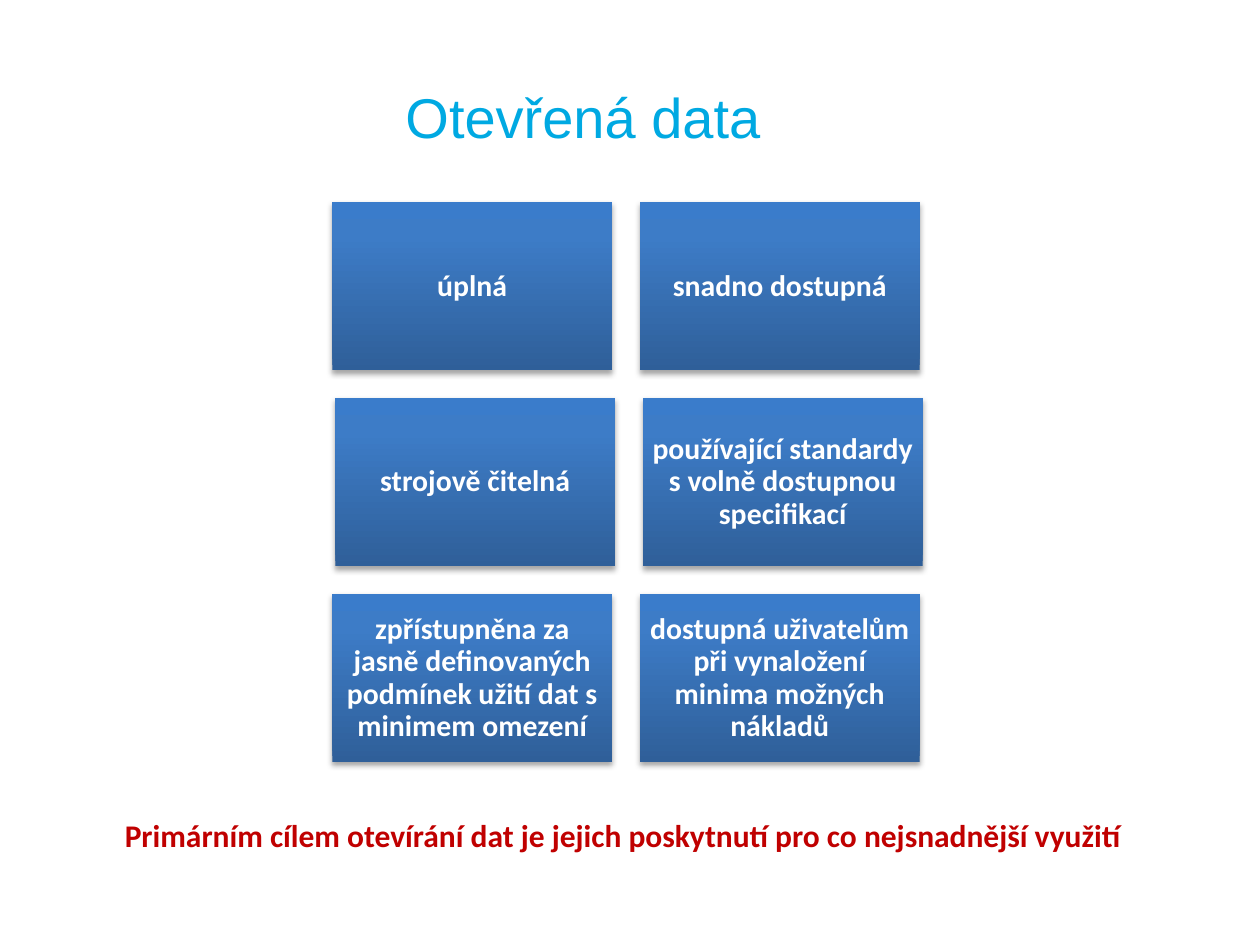
"""Build the slide on the properties of open data."""
import dataclasses

import lxml.etree
import pptx
import pptx.dml.color
import pptx.enum.shapes
import pptx.enum.text
import pptx.oxml
import pptx.oxml.ns
import pptx.shapes.autoshape
import pptx.slide
import pptx.util

Cm = pptx.util.Cm
ALIGN = pptx.enum.text.PP_ALIGN

COLORS = {
    "title": "00A9E2",
    "tile_text": "FFFFFF",
    "conclusion": "C00000",
    "tile_bottom": "2F5F99",
    "tile_middle": "3D7CC7",
    "tile_top": "3A7CCB",
    "shadow": "000000",
}
GRADIENT = ((0, "tile_bottom"), (80, "tile_middle"), (100, "tile_top"))
TILE_WIDTH, TILE_HEIGHT = 5.64, 3.39
COLUMN_STEP, ROW_STEP = 6.2, 3.95
GRID_TOP = 4.08
TILE_INSET = 0.18


@dataclasses.dataclass(frozen=True)
class TileRow:
    """A row of tiles with its left edge in centimetres."""

    left: float
    labels: tuple[str, ...]


ROWS = (
    TileRow(6.7, ("úplná", "snadno dostupná")),
    TileRow(6.76, ("strojově čitelná", "používající standardy s volně dostupnou specifikací")),
    TileRow(6.7, (
        "zpřístupněna za jasně definovaných podmínek užití dat s minimem omezení",
        "dostupná uživatelům při vynaložení minima možných nákladů",
    )),
)


def write_text(shape: pptx.shapes.autoshape.Shape, text: str, *, size: float, color: str,
               font: str = "Calibri", bold: bool = True, align: ALIGN = ALIGN.CENTER,
               line_spacing: float = 1.0, inset: float | None = None,
               anchor: pptx.enum.text.MSO_ANCHOR = pptx.enum.text.MSO_ANCHOR.MIDDLE) -> None:
    """Write one formatted paragraph into a shape."""
    frame = shape.text_frame
    frame.word_wrap = True
    frame.vertical_anchor = anchor
    if inset is not None:
        frame.margin_left = frame.margin_right = Cm(inset)
        frame.margin_top = frame.margin_bottom = Cm(inset)
    paragraph = frame.paragraphs[0]
    paragraph.alignment = align
    paragraph.line_spacing = line_spacing
    run = paragraph.add_run()
    run.text = text
    run.font.name = font
    run.font.size = pptx.util.Pt(size)
    run.font.bold = bold
    run.font.color.rgb = pptx.dml.color.RGBColor.from_string(COLORS[color])


def add_color(parent: lxml.etree._Element, color: str) -> lxml.etree._Element:
    """Add an RGB colour element to a parent element."""
    element = lxml.etree.SubElement(parent, pptx.oxml.ns.qn("a:srgbClr"))
    element.set("val", COLORS[color])
    return element


def style_tile(shape: pptx.shapes.autoshape.Shape) -> None:
    """Give a tile its vertical gradient and soft shadow."""
    qn = pptx.oxml.ns.qn
    shape.line.fill.background()
    shape.fill.gradient()
    shape.fill.gradient_angle = 90
    properties = shape.element.spPr
    stops = properties.find(".//" + qn("a:gsLst"))
    for stop in list(stops):
        stops.remove(stop)
    for position, color in GRADIENT:
        stop = lxml.etree.SubElement(stops, qn("a:gs"))
        stop.set("pos", str(position * 1000))
        add_color(stop, color)
    shape.shadow.inherit = False
    shadow = lxml.etree.SubElement(properties.find(qn("a:effectLst")), qn("a:outerShdw"))
    settings = {"blurRad": "40000", "dist": "23000", "dir": "5400000", "rotWithShape": "0"}
    for name, value in settings.items():
        shadow.set(name, value)
    alpha = lxml.etree.SubElement(add_color(shadow, "shadow"), qn("a:alpha"))
    alpha.set("val", "35000")


def add_tile(slide: pptx.slide.Slide, label: str, left: float, top: float) -> None:
    """Add one labelled tile."""
    tile = slide.shapes.add_shape(pptx.enum.shapes.MSO_SHAPE.RECTANGLE, Cm(left), Cm(top),
                                  Cm(TILE_WIDTH), Cm(TILE_HEIGHT))
    style_tile(tile)
    write_text(tile, label, size=17, color="tile_text", line_spacing=0.9, inset=TILE_INSET)


def main() -> None:
    """Build and save the presentation."""
    presentation = pptx.Presentation()
    presentation.slide_width, presentation.slide_height = Cm(25.4), Cm(19.05)
    slide = presentation.slides.add_slide(presentation.slide_layouts[5])

    title = slide.shapes.title
    title.left, title.top, title.width, title.height = Cm(7.92), Cm(0.76), Cm(16.21), Cm(3.18)
    write_text(title, "Otevřená data", size=32, color="title", font="Arial", bold=False,
               align=ALIGN.LEFT)

    for row_index, row in enumerate(ROWS):
        for column_index, label in enumerate(row.labels):
            add_tile(slide, label, row.left + column_index * COLUMN_STEP,
                     GRID_TOP + row_index * ROW_STEP)

    conclusion = slide.shapes.add_textbox(Cm(2.13), Cm(16.33), Cm(21.01), Cm(1.02))
    write_text(conclusion,
               "Primárním cílem otevírání dat je jejich poskytnutí pro co nejsnadnější využití ",
               size=18, color="conclusion", anchor=pptx.enum.text.MSO_ANCHOR.TOP)

    presentation.save("out.pptx")


if __name__ == "__main__":
    main()
